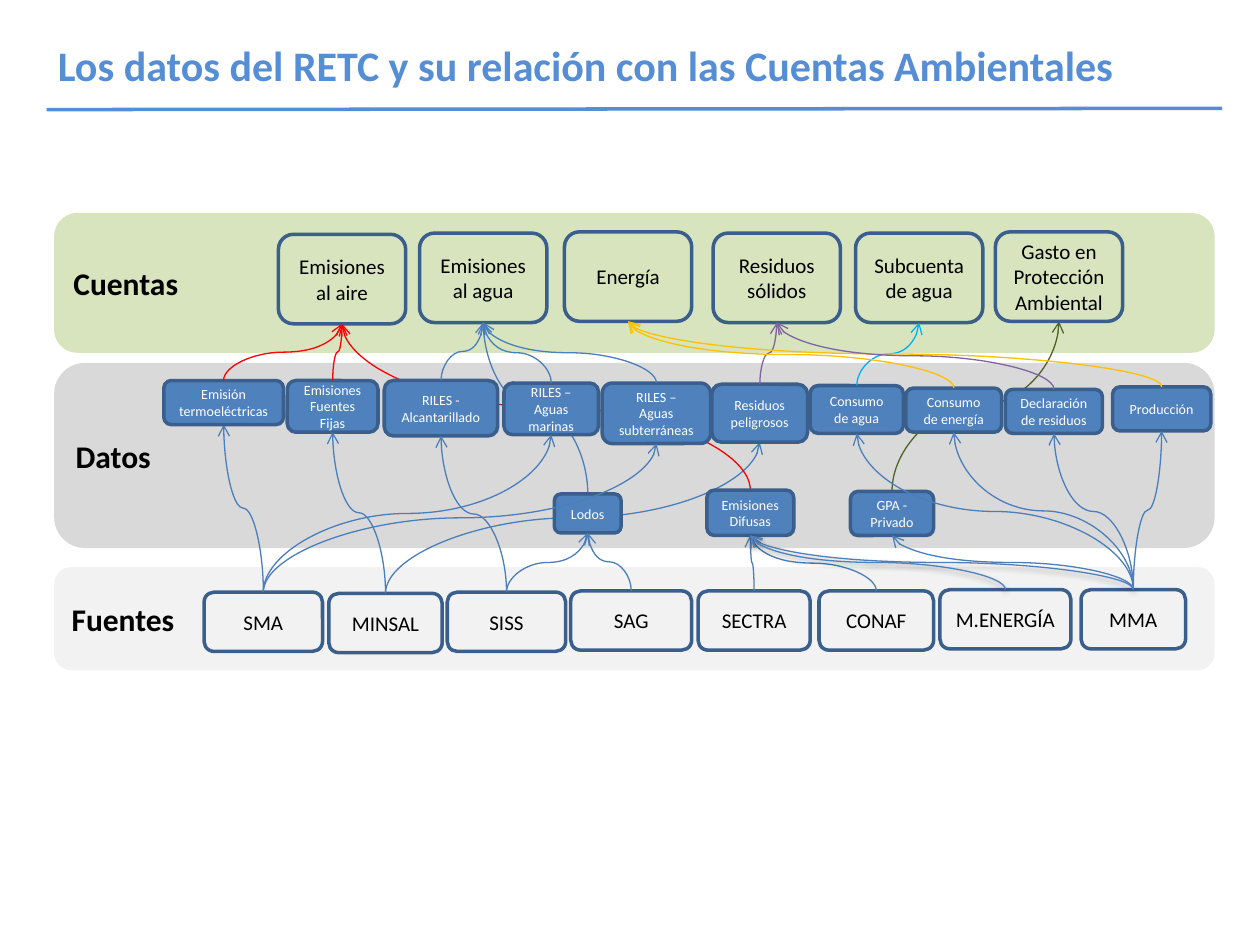
import lxml.etree
import pptx
import pptx.dml.color
import pptx.enum.shapes
import pptx.enum.text
import pptx.oxml.ns
import pptx.util

COLS, ROWS = 100, 75
BLUE, DARK, SKY = "4B7EBC", "3A5F8C", "558ED5"
FLAT, SHADE = False, True

# text, left, top, width, height, fill
BANDS = [
    ("Fuentes", 4.3, 45, 92.1, 8.2, "F2F2F2"),
    ("Datos", 4.3, 28.8, 92.1, 14.7, "D9D9D9"),
    ("Cuentas", 4.3, 16.9, 92.1, 11.1, "D7E4BD"),
]

ACCOUNTS = [(text, left, top, 10.1, 7.1) for text, left, top in [
    ("Emisiones al aire", 22.1, 18.6),
    ("Emisiones al agua", 33.3, 18.5),
    ("Energía", 44.8, 18.4),
    ("Residuos sólidos", 56.6, 18.5),
    ("Subcuenta de agua", 67.9, 18.5),
    ("Gasto en Protección Ambiental", 79, 18.4),
]]

DATA = [
    ("Emisión termoeléctricas", 13, 30.2, 9.5, 3.5),
    ("Emisiones Fuentes Fijas", 22.8, 30.2, 7.2, 4.1),
    ("RILES - Alcantarillado", 30.5, 30.2, 9, 4.4),
    ("RILES – Aguas marinas", 40, 30.4, 7.5, 4.1),
    ("RILES – Aguas subterráneas", 47.8, 30.4, 8.6, 4.8),
    ("Residuos peligrosos", 56.5, 30.5, 7.6, 4.6),
    ("Declaración de residuos", 79.8, 30.9, 7.7, 3.5),
    ("Lodos", 44, 39.2, 5.3, 3.1),
    ("GPA - Privado", 67.5, 39, 6.6, 3.5),
    ("Emisiones Difusas", 56.1, 38.9, 6.9, 3.6),
    ("Producción", 88.3, 30.7, 7.8, 3.5),
    ("Consumo de agua", 64.3, 30.6, 7.4, 3.8),
    ("Consumo de energía", 71.9, 30.8, 7.6, 3.5),
]

SOURCES = [(text, left, top, width, 4.7) for text, left, top, width in [
    ("SMA", 16.2, 47, 9.4),
    ("MINSAL", 26.1, 47.1, 9),
    ("SISS", 35.5, 47, 9.4),
    ("SAG", 45.3, 46.9, 9.6),
    ("SECTRA", 55.4, 46.9, 8.9),
    ("CONAF", 65, 46.9, 9.1),
    ("M.ENERGÍA", 74.6, 46.8, 10.4),
    ("MMA", 85.8, 46.8, 8.3),
]]

# target, colour, origins
BACK = [
    ("Emisión termoeléctricas", BLUE, ["SMA"]),
    ("Residuos peligrosos", BLUE, ["MINSAL"]),
    ("Gasto en Protección Ambiental", "4F6228", ["GPA - Privado"]),
    ("Emisiones al agua", BLUE, ["Lodos"]),
    ("Emisiones al aire", "FF0000", ["Emisiones Difusas"]),
]
FRONT = [
    ("RILES – Aguas marinas", BLUE, ["SMA"]),
    ("RILES – Aguas subterráneas", BLUE, ["SMA"]),
    ("Emisiones Fuentes Fijas", BLUE, ["MINSAL"]),
    ("RILES - Alcantarillado", BLUE, ["SISS"]),
    ("Lodos", BLUE, ["SAG", "SISS"]),
    ("Emisiones Difusas", BLUE, ["CONAF", "SECTRA"]),
    ("GPA - Privado", BLUE, ["MMA"]),
    ("Consumo de agua", BLUE, ["MMA"]),
    ("Consumo de energía", BLUE, ["MMA"]),
    ("Declaración de residuos", BLUE, ["MMA"]),
    ("Producción", BLUE, ["MMA"]),
    ("Emisiones al aire", "FF0000",
     ["Emisión termoeléctricas", "Emisiones Fuentes Fijas"]),
    ("Emisiones al agua", BLUE,
     ["RILES - Alcantarillado", "RILES – Aguas marinas",
      "RILES – Aguas subterráneas"]),
    ("Residuos sólidos", "8064A2", ["Residuos peligrosos"]),
    ("Subcuenta de agua", "00B0F0", ["Consumo de agua"]),
    ("Energía", "FFC000", ["Consumo de energía", "Producción"]),
    ("Residuos sólidos", "8064A2", ["Declaración de residuos"]),
]
SOFT = [("Emisiones Difusas", "4F81BD", ["MMA", "M.ENERGÍA"])]


def rgb(code):
    return pptx.dml.color.RGBColor.from_string(code)


def put(item, vals):
    for name, val in vals.items():
        setattr(item, name, val)


def node(home, tag, **vals):
    return lxml.etree.SubElement(home, pptx.oxml.ns.qn(tag), vals)


class Board:
    """Holds the style and the current slide, on a grid of COLS by ROWS."""
    font = "Calibri"
    left = pptx.enum.text.PP_ALIGN.LEFT
    mid = pptx.enum.text.PP_ALIGN.CENTER

    def __init__(self, deck):
        self.col = deck.slide_width / COLS
        self.row = deck.slide_height / ROWS
        self.slide = deck.slides.add_slide(deck.slide_layouts[5])
        self.shapes = self.slide.shapes

    def span(self, x, y, *ends):
        """Turn two pairs of columns and rows into lengths."""
        return [round(val * unit) for val, unit
                in zip((x, y, *ends), (self.col, self.row) * 2)]

    def label(self, shape, text, size, ink, bold, align, anchor="MIDDLE"):
        frame = shape.text_frame
        put(frame, {"text": text, "word_wrap": True,
                    "vertical_anchor": getattr(pptx.enum.text.MSO_ANCHOR, anchor)})
        para = frame.paragraphs[0]
        para.alignment = align
        put(para.font, {"name": self.font, "size": pptx.util.Pt(size), "bold": bold})
        para.font.color.rgb = rgb(ink)

    def title(self, text, *spot):
        shape = self.shapes.title
        put(shape, dict(zip(("left", "top", "width", "height"), self.span(*spot))))
        self.label(shape, text, 24, SKY, True, self.left, "TOP")

    def box(self, text, *spot, fill=None, edge=DARK, size=12, ink="000000",
            bold=False, align=mid):
        kind = pptx.enum.shapes.MSO_SHAPE.ROUNDED_RECTANGLE
        shape = self.shapes.add_shape(kind, *self.span(*spot))
        shape.shadow.inherit = False
        for part, code in ((shape.fill, fill), (shape.line.fill, edge)):
            if code:
                part.solid()
                part.fore_color.rgb = rgb(code)
            else:
                part.background()
        if edge:
            shape.line.width = pptx.util.Pt(2)
        self.label(shape, text, size, ink, bold, align)

    def line(self, kind, ends, ink, width, shade=FLAT):
        kind = getattr(pptx.enum.shapes.MSO_CONNECTOR, kind)
        wire = self.shapes.add_connector(kind, *self.span(*ends))
        wire.line.color.rgb = rgb(ink)
        wire.line.width = pptx.util.Pt(width)
        glow = node(wire.element.spPr, "a:effectLst")
        if shade:
            cast = node(glow, "a:outerShdw", blurRad="40000", dist="20000",
                        dir="5400000", rotWithShape="0")
            tone = node(cast, "a:srgbClr", val="000000")
            node(tone, "a:alpha", val="38000")
        return wire

    def link(self, start, end, ink, shade):
        """Curve up from the top of one box to the foot of another."""
        x1, y1 = start[0] + start[2] / 2, start[1]
        x2, y2 = end[0] + end[2] / 2, end[1] + end[3]
        wide, high = abs(x2 - x1), y1 - y2
        # The curve is laid out sideways about its centre, then turned upright.
        x, y = (x1 + x2 - high) / 2, (y1 + y2 - wide) / 2
        if x2 > x1:
            ends, turn = (x + high, y + wide, x, y), 90
        else:
            ends, turn = (x, y + wide, x + high, y), 270
        wire = self.line("CURVE", ends, ink, 0.75, shade)
        form = wire.element.spPr
        form.find(pptx.oxml.ns.qn("a:xfrm")).set("rot", str(turn * 60000))
        node(form.find(pptx.oxml.ns.qn("a:ln")), "a:tailEnd", type="arrow")

    def links(self, plan, spots, shade=FLAT):
        for end, ink, starts in plan:
            for start in starts:
                self.link(spots[start], spots[end], ink, shade)


def main():
    deck = pptx.Presentation()
    put(deck, {"slide_width": pptx.util.Inches(10),
               "slide_height": pptx.util.Inches(7.5)})
    board = Board(deck)
    spots = {text: spot for text, *spot in ACCOUNTS + DATA + SOURCES}

    board.title("Los datos del RETC y su relación con las Cuentas Ambientales",
                3.6, 2.6, 86.6, 5)
    for *band, fill in BANDS:
        board.box(*band, fill=fill, edge=None, size=18, bold=True, align=board.left)
    board.links(BACK, spots)
    for item in ACCOUNTS + SOURCES:
        board.box(*item)
    for item in DATA:
        board.box(*item, fill="4F81BD", size=8, ink="FFFFFF")
    board.links(FRONT, spots)
    board.links(SOFT, spots, SHADE)
    board.line("STRAIGHT", (3.7, 8.7, 97, 8.6), SKY, 2)
    deck.save("out.pptx")


if __name__ == "__main__":
    main()
